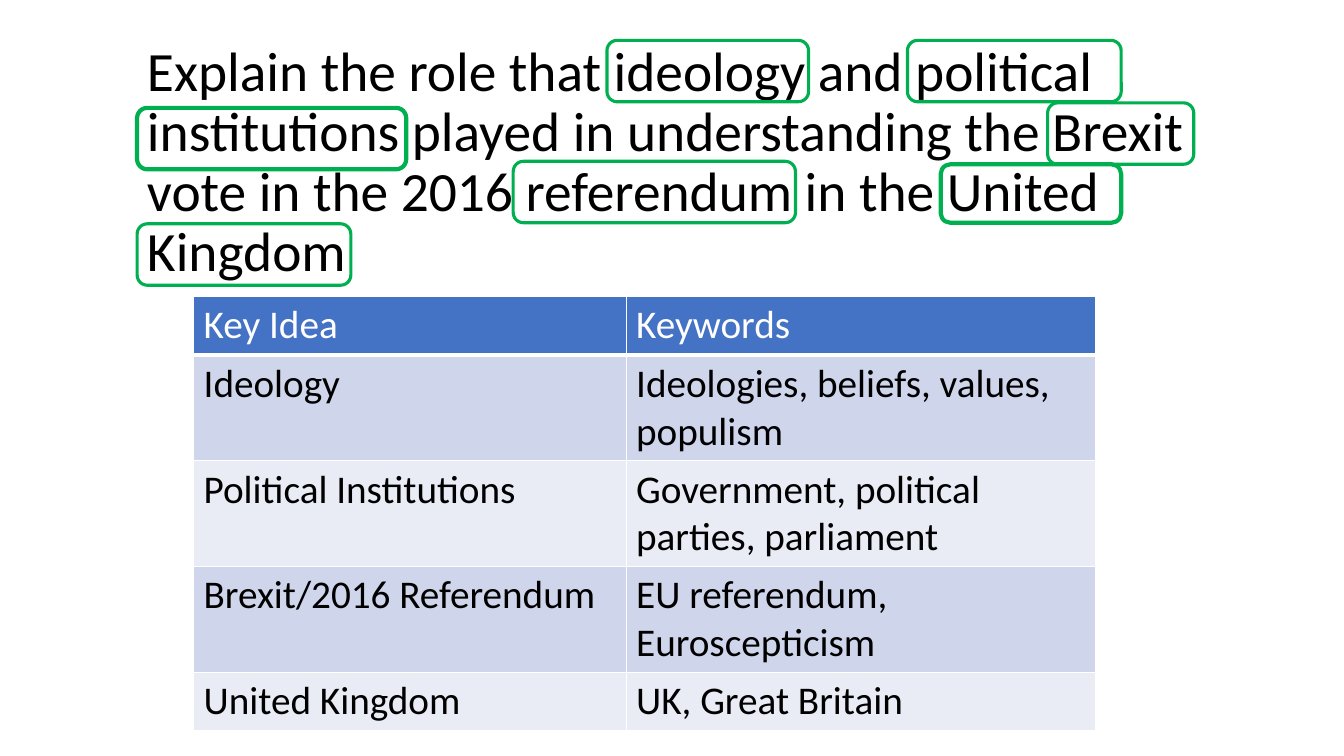
from lxml import etree
from pptx import Presentation
from pptx.dml.color import RGBColor
from pptx.enum import shapes, text
from pptx.oxml import ns
from pptx.util import Inches, Pt

QUESTION = ("Explain the role that ideology and political institutions played in "
            "understanding the Brexit vote in the 2016 referendum in the United Kingdom")
ROWS = [
    ("Key Idea", "Keywords", 0.58),
    ("Ideology", "Ideologies, beliefs, values, populism", 1.05),
    ("Political Institutions", "Government, political parties, parliament", 1.05),
    ("Brexit/2016 Referendum", "EU referendum, Euroscepticism", 1.05),
    ("United Kingdom", "UK, Great Britain", 0.58),
]
COL_WIDTHS = (4.29, 4.66)
HEADER_FILL, BANDS = "4472C4", ("CFD5EA", "E9EBF5")
WHITE, BLACK, GREEN = "FFFFFF", "000000", "00B050"
KEYWORD_BOXES = [
    (6.02, 0.4, 2, 0.61, 2.25),
    (9, 0.4, 2.12, 0.61, 2.25),
    (1.36, 1.07, 2.67, 0.61, 3),
    (10.39, 1.02, 1.45, 0.61, 2.25),
    (5.09, 1.6, 2.8, 0.61, 2.25),
    (9.33, 1.63, 1.79, 0.58, 3),
    (1.36, 2.22, 2.12, 0.61, 2.25),
]


def rgb(value):
    return RGBColor.from_string(value)


def style(p, size, color):
    p.font.name = "Calibri"
    p.font.size = Pt(size)
    p.font.color.rgb = rgb(color)


def add_borders(cell, bottom):
    tc_pr = cell._tc.get_or_add_tcPr()
    for i, (side, width) in enumerate((("L", 1), ("R", 1), ("T", 1), ("B", bottom))):
        ln = etree.Element(ns.qn(f"a:ln{side}"), w=str(Pt(width)))
        fill = etree.SubElement(ln, ns.qn("a:solidFill"))
        etree.SubElement(fill, ns.qn("a:srgbClr"), val=WHITE)
        tc_pr.insert(i, ln)


def add_question(s):
    sp = s.shapes.add_textbox(Inches(1.36), Inches(0.88), Inches(10.8), Inches(1.48))
    tf = sp.text_frame
    tf.word_wrap = True
    tf.vertical_anchor = text.MSO_ANCHOR.MIDDLE
    p = tf.paragraphs[0]
    p.text = QUESTION
    p.line_spacing = 0.9
    style(p, 39.6, BLACK)


def add_keyword_table(s):
    height = sum(row[-1] for row in ROWS)
    table = s.shapes.add_table(len(ROWS), len(COL_WIDTHS), Inches(1.92), Inches(2.94),
                               Inches(sum(COL_WIDTHS)), Inches(height)).table
    for column, width in zip(table.columns, COL_WIDTHS):
        column.width = Inches(width)
    for r, (*words, row_height) in enumerate(ROWS):
        table.rows[r].height = Inches(row_height)
        for c, word in enumerate(words):
            cell = table.cell(r, c)
            cell.text = word
            style(cell.text_frame.paragraphs[0], 28, BLACK if r else WHITE)
            cell.fill.solid()
            cell.fill.fore_color.rgb = rgb(BANDS[(r - 1) % 2] if r else HEADER_FILL)
            add_borders(cell, 1 if r else 3)


def add_keyword_boxes(s):
    for *box, weight in KEYWORD_BOXES:
        sp = s.shapes.add_shape(shapes.MSO_SHAPE.ROUNDED_RECTANGLE, *map(Inches, box))
        sp.shadow.inherit = False
        sp.fill.background()
        sp.line.color.rgb = rgb(GREEN)
        sp.line.width = Pt(weight)


def main():
    prs = Presentation()
    prs.slide_width, prs.slide_height = Inches(13.33), Inches(7.5)
    s = prs.slides.add_slide(prs.slide_layouts[6])
    add_question(s)
    add_keyword_table(s)
    add_keyword_boxes(s)
    prs.save("out.pptx")


if __name__ == "__main__":
    main()
